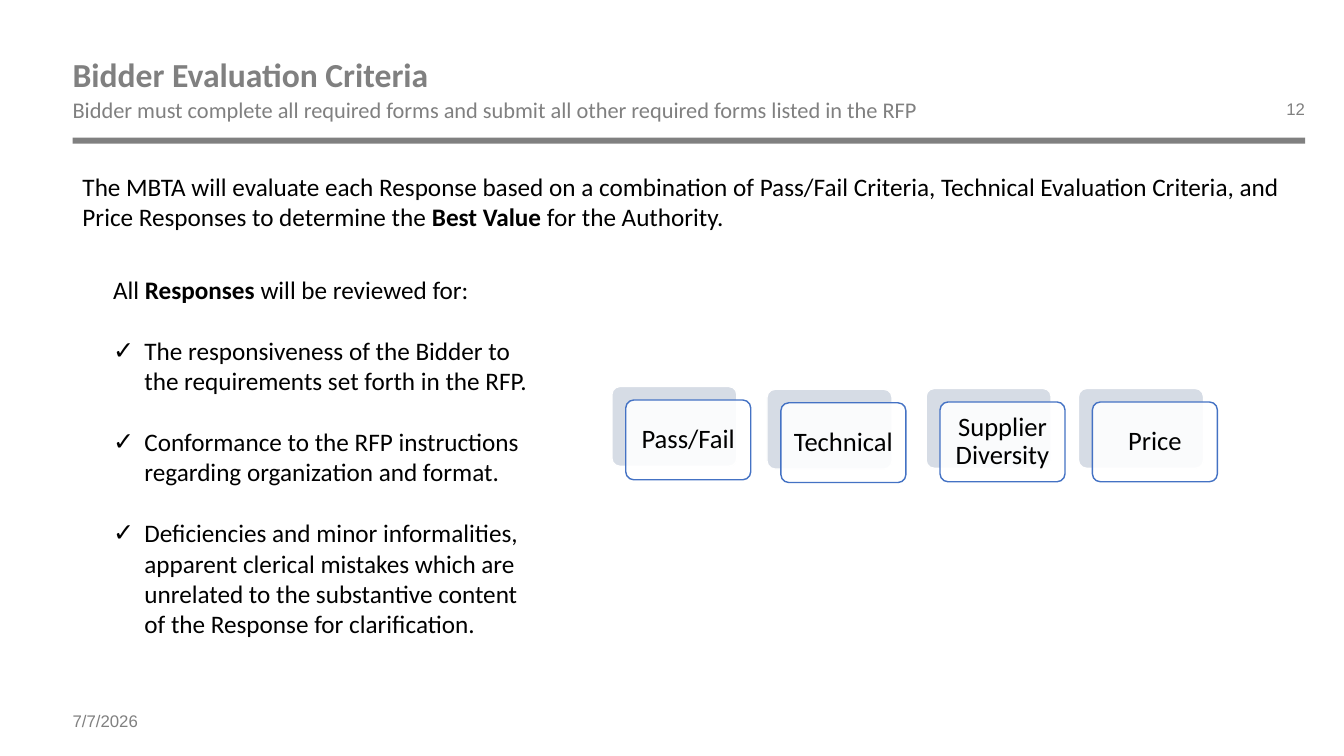
import dataclasses

import lxml.etree
import pptx
import pptx.dml.color
import pptx.enum.shapes
import pptx.enum.text
import pptx.oxml.ns
import pptx.util

Cm = pptx.util.Cm
Pt = pptx.util.Pt
Align = pptx.enum.text.PP_ALIGN
Anchor = pptx.enum.text.MSO_ANCHOR
Preset = pptx.enum.shapes.MSO_SHAPE
qn = pptx.oxml.ns.qn


@dataclasses.dataclass(frozen=True)
class Theme:
    body_font: str = "Calibri"
    note_font: str = "Arial"
    grey: str = "808080"
    black: str = "000000"
    white: str = "FFFFFF"
    blue: str = "4472C4"
    pale: str = "D6DCE5"
    title_size: float = 24
    subtitle_size: float = 16
    body_size: float = 18
    card_size: float = 19
    note_size: float = 12


THEME = Theme()
CHECKS = [
    "The responsiveness of the Bidder to the requirements set forth in the RFP.",
    "Conformance to the RFP instructions regarding organization and format.",
    "Deficiencies and minor informalities, apparent clerical mistakes which are "
    "unrelated to the substantive content of the Response for clarification.",
]
CARDS = [
    ("Pass/Fail", 0, 0),
    ("Technical", 3.91, 0.07),
    ("Supplier Diversity", 7.92, 0.05),
    ("Price", 11.76, 0.05),
]


def rgb(value):
    return pptx.dml.color.RGBColor.from_string(value)


def set_frame(frame, insets, anchor=Anchor.TOP):
    frame.word_wrap = True
    frame.vertical_anchor = anchor
    frame.margin_left, frame.margin_top, frame.margin_right, frame.margin_bottom = map(Cm, insets)


def add_text_box(page, box, insets=(0.25, 0.13, 0.25, 0.13), anchor=Anchor.TOP):
    frame = page.shapes.add_textbox(*map(Cm, box)).text_frame
    set_frame(frame, insets, anchor)
    return frame


def add_span(para, text, size, color=THEME.black, bold=False, font=THEME.body_font):
    span = para.add_run()
    span.text = text
    span.font.name = font
    span.font.size = Pt(size)
    span.font.bold = bold
    span.font.color.rgb = rgb(color)


def add_check(para):
    properties = para._p.get_or_add_pPr()
    properties.set("marL", str(Cm(0.79)))
    properties.set("indent", str(-Cm(0.79)))
    lxml.etree.SubElement(properties, qn("a:buFont")).set("typeface", THEME.note_font)
    lxml.etree.SubElement(properties, qn("a:buChar")).set("char", "✓")


def add_panel(page, preset, box, fill, line=None):
    panel = page.shapes.add_shape(preset, *map(Cm, box))
    panel.shadow.inherit = False
    panel.fill.solid()
    panel.fill.fore_color.rgb = rgb(fill)
    if line:
        panel.line.color.rgb = rgb(line)
        panel.line.width = Pt(1)
    else:
        panel.line.fill.background()
    return panel


def build_header(page, box):
    left, top, width, height = box
    add_panel(page, Preset.RECTANGLE, (left, top + height, width, 0.15), THEME.grey)

    title = add_text_box(page, (left, top, width, 1.37), (0, 0, 0.25, 0), Anchor.BOTTOM).paragraphs[0]
    title.line_spacing = 0.9
    add_span(title, "Bidder Evaluation Criteria", THEME.title_size, THEME.grey, True)

    subtitle = add_text_box(page, (left, top + 1.47, 22.5, 0.97), (0, 0, 0.25, 0.13)).paragraphs[0]
    subtitle.line_spacing = 0.9
    add_span(
        subtitle,
        "Bidder must complete all required forms and submit all other required forms listed in the RFP",
        THEME.subtitle_size,
        THEME.grey,
    )

    number_box = (left + width - 8.97, top + 1.47, 8.97, 0.99)
    number = add_text_box(page, number_box, (0.25, 0, 0, 0.13)).paragraphs[0]
    number.alignment = Align.RIGHT
    add_span(number, "12", THEME.note_size, THEME.grey, font=THEME.note_font)


def build_intro(page, box):
    para = add_text_box(page, box).paragraphs[0]
    add_span(
        para,
        "The MBTA will evaluate each Response based on a combination of Pass/Fail Criteria, "
        "Technical Evaluation Criteria, and Price Responses to determine the ",
        THEME.body_size,
    )
    add_span(para, "Best Value", THEME.body_size, bold=True)
    add_span(para, " for the Authority.", THEME.body_size)


def build_review_list(page, box):
    frame = add_text_box(page, box)
    lead = frame.paragraphs[0]
    add_span(lead, "All ", THEME.body_size)
    add_span(lead, "Responses ", THEME.body_size, bold=True)
    add_span(lead, "will be reviewed for:", THEME.body_size)
    for check in CHECKS:
        para = frame.add_paragraph()
        para.space_before = Pt(22)
        add_check(para)
        add_span(para, check, THEME.body_size)


def build_card(page, box, label):
    left, top, width, height = box
    back = add_panel(page, Preset.ROUNDED_RECTANGLE, box, THEME.pale, THEME.white)
    front_box = (left + 0.35, top + 0.34, width, height)
    front = add_panel(page, Preset.ROUNDED_RECTANGLE, front_box, THEME.white, THEME.blue)
    for panel in (back, front):
        panel.adjustments[0] = 0.1
    color = front._element.spPr.find(qn("a:solidFill")).find(qn("a:srgbClr"))
    lxml.etree.SubElement(color, qn("a:alpha")).set("val", "90000")

    set_frame(front.text_frame, (0.2, 0.2, 0.2, 0.2), Anchor.MIDDLE)
    para = front.text_frame.paragraphs[0]
    para.alignment = Align.CENTER
    para.line_spacing = 0.9
    add_span(para, label, THEME.card_size)


def build_criteria(page, box):
    left, top, width, height = box
    for label, across, down in CARDS:
        build_card(page, (left + across, top + down, 3.15, 2.01), label)


def build_footer(page, box):
    para = add_text_box(page, box, (0, 0.13, 0, 0.13), Anchor.MIDDLE).paragraphs[0]
    add_span(para, "7/7/2026", THEME.note_size, THEME.grey, font=THEME.note_font)


def main():
    deck = pptx.Presentation()
    deck.slide_width = Cm(33.87)
    deck.slide_height = Cm(19.05)
    page = deck.slides.add_slide(deck.slide_layouts[6])
    build_header(page, (1.83, 1.02, 31.06, 2.45))
    build_criteria(page, (15.42, 9.74, 15.26, 2.4))
    build_intro(page, (1.83, 4.19, 31.06, 1.8))
    build_review_list(page, (2.6, 6.78, 11.18, 10.26))
    build_footer(page, (1.83, 17.65, 7.62, 1.02))
    deck.save("out.pptx")


if __name__ == "__main__":
    main()
